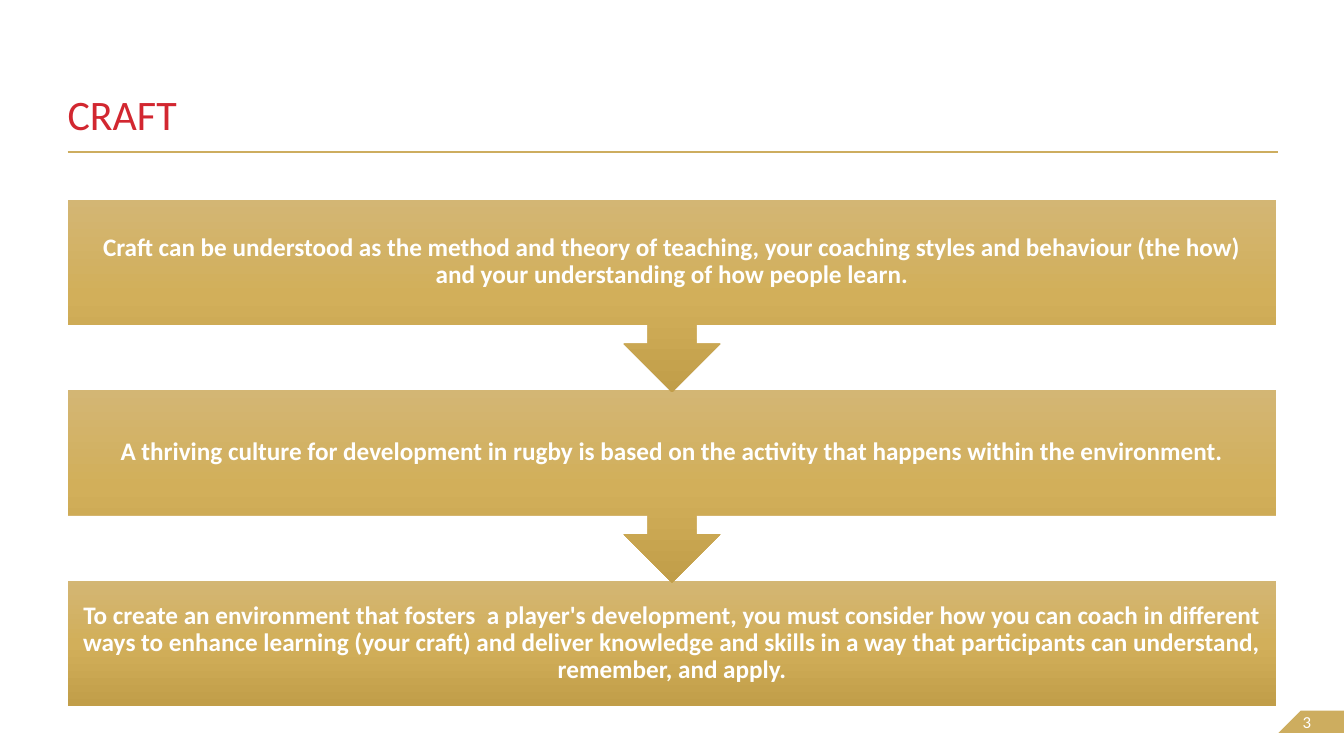
from copy import deepcopy

from lxml import etree
from pptx import Presentation
from pptx.dml.color import RGBColor
from pptx.enum import shapes, text
from pptx.oxml.ns import qn
from pptx.util import Inches, Pt

FONT = "Calibri"
RED = RGBColor(0xD2, 0x27, 0x30)
GOLD = RGBColor(0xCD, 0xAD, 0x5F)
WHITE = RGBColor(0xFF, 0xFF, 0xFF)
GRADIENT = [
    (0, RGBColor(0xD3, 0xB6, 0x74)),
    (0.5, RGBColor(0xD2, 0xAF, 0x5A)),
    (1, RGBColor(0xC1, 0x9E, 0x49)),
]

LEFT = 0.67
STEP_TOP, STEP_PITCH = 1.98, 1.89
STEP_WIDTH, BOX_HEIGHT, CALLOUT_HEIGHT = 11.99, 1.24, 1.91
STEPS = [
    "Craft can be understood as the method and theory of teaching, your coaching styles "
    "and behaviour (the how) and your understanding of how people learn.",
    "A thriving culture for development in rugby is based on the activity that happens "
    "within the environment.",
    "To create an environment that fosters  a player's development, you must consider how "
    "you can coach in different ways to enhance learning (your craft) and deliver knowledge "
    "and skills in a way that participants can understand, remember, and apply.",
]


def write(shape, words, size, color, insets, bold=False):
    """Fill a shape with one paragraph; insets are left, top, right, bottom in inches."""
    frame = shape.text_frame
    frame.text = words
    frame.word_wrap = True
    frame.auto_size = text.MSO_AUTO_SIZE.NONE
    frame.margin_left, frame.margin_top, frame.margin_right, frame.margin_bottom = map(
        Inches, insets)
    para = frame.paragraphs[0]
    font = para.runs[0].font
    font.name, font.size, font.bold = FONT, Pt(size), bold
    font.color.rgb = color
    return frame, para


def fill_gradient(shape):
    fill = shape.fill
    fill.gradient()
    fill.gradient_angle = 270
    stop_list = shape._element.spPr.find(".//" + qn("a:gsLst"))
    stop_list.append(deepcopy(stop_list[-1]))
    for stop, (position, color) in zip(fill.gradient_stops, GRADIENT):
        stop.position = position
        stop.color.rgb = color


deck = Presentation()
deck.slide_width, deck.slide_height = Inches(13.33), Inches(7.5)
page = deck.slides.add_slide(deck.slide_layouts[5])

# Title and rule
title = page.shapes.title
title.left, title.top, title.width, title.height = map(Inches, (LEFT, 0.5, 10.65, 0.87))
frame, para = write(title, "CRAFT", 30, RED, (0, 0, 0, 0))
frame.vertical_anchor = text.MSO_ANCHOR.BOTTOM
para.alignment = text.PP_ALIGN.LEFT
para.line_spacing = 0.8

rule = page.shapes.add_connector(
    shapes.MSO_CONNECTOR.STRAIGHT, Inches(LEFT), Inches(1.51), Inches(12.68), Inches(1.51))
rule.line.color.rgb = GOLD
rule.line.width = Pt(1)
etree.SubElement(rule._element.spPr, qn("a:effectLst"))

# Slide number tab
outline = page.shapes.build_freeform(Inches(12.9), Inches(7.05))
outline.add_line_segments(
    [(Inches(x), Inches(y)) for x, y in [(13.33, 7.05), (13.33, 7.27), (12.68, 7.27)]])
tab = outline.convert_to_shape()
tab.shadow.inherit = False
tab.fill.solid()
tab.fill.fore_color.rgb = GOLD
tab.line.fill.background()
frame, para = write(tab, "3", 12, WHITE, (0.24, 0, 0, 0))
frame.vertical_anchor = text.MSO_ANCHOR.MIDDLE
para.alignment = text.PP_ALIGN.LEFT

# Steps from the last up, so each arrow tip lies over the next box
for index, words in reversed(list(enumerate(STEPS))):
    is_last = index == len(STEPS) - 1
    kind = shapes.MSO_SHAPE.RECTANGLE if is_last else shapes.MSO_SHAPE.DOWN_ARROW_CALLOUT
    height = BOX_HEIGHT if is_last else CALLOUT_HEIGHT
    step = page.shapes.add_shape(
        kind, Inches(LEFT), Inches(STEP_TOP + index * STEP_PITCH),
        Inches(STEP_WIDTH), Inches(height))
    if not is_last:
        step.adjustments[3] = BOX_HEIGHT / CALLOUT_HEIGHT
    step.shadow.inherit = False
    fill_gradient(step)
    step.line.fill.background()
    frame, para = write(step, words, 18, WHITE, [0.14] * 4, bold=True)
    frame.vertical_anchor = text.MSO_ANCHOR.MIDDLE
    para.alignment = text.PP_ALIGN.CENTER
    para.line_spacing = 0.9

deck.save("out.pptx")
